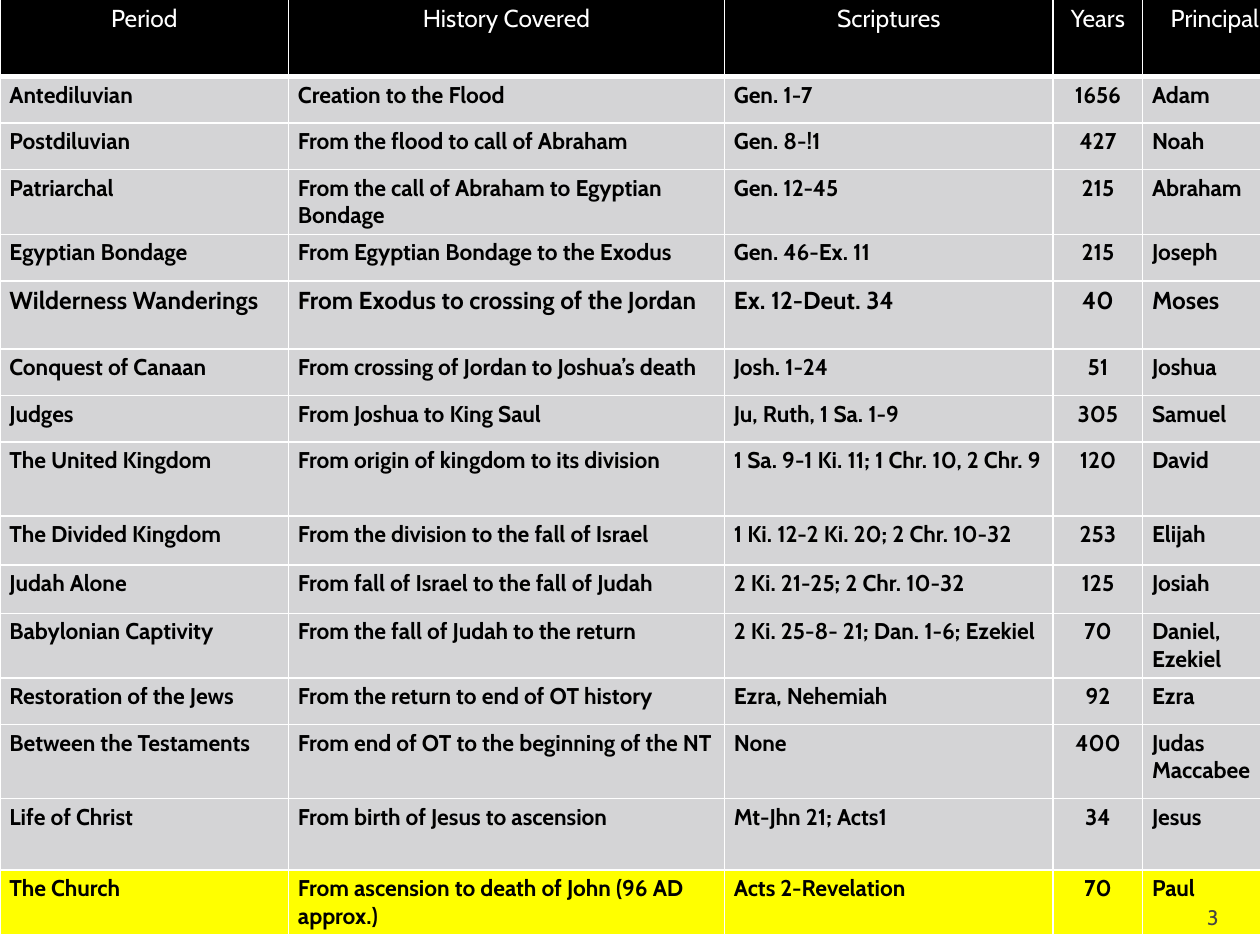
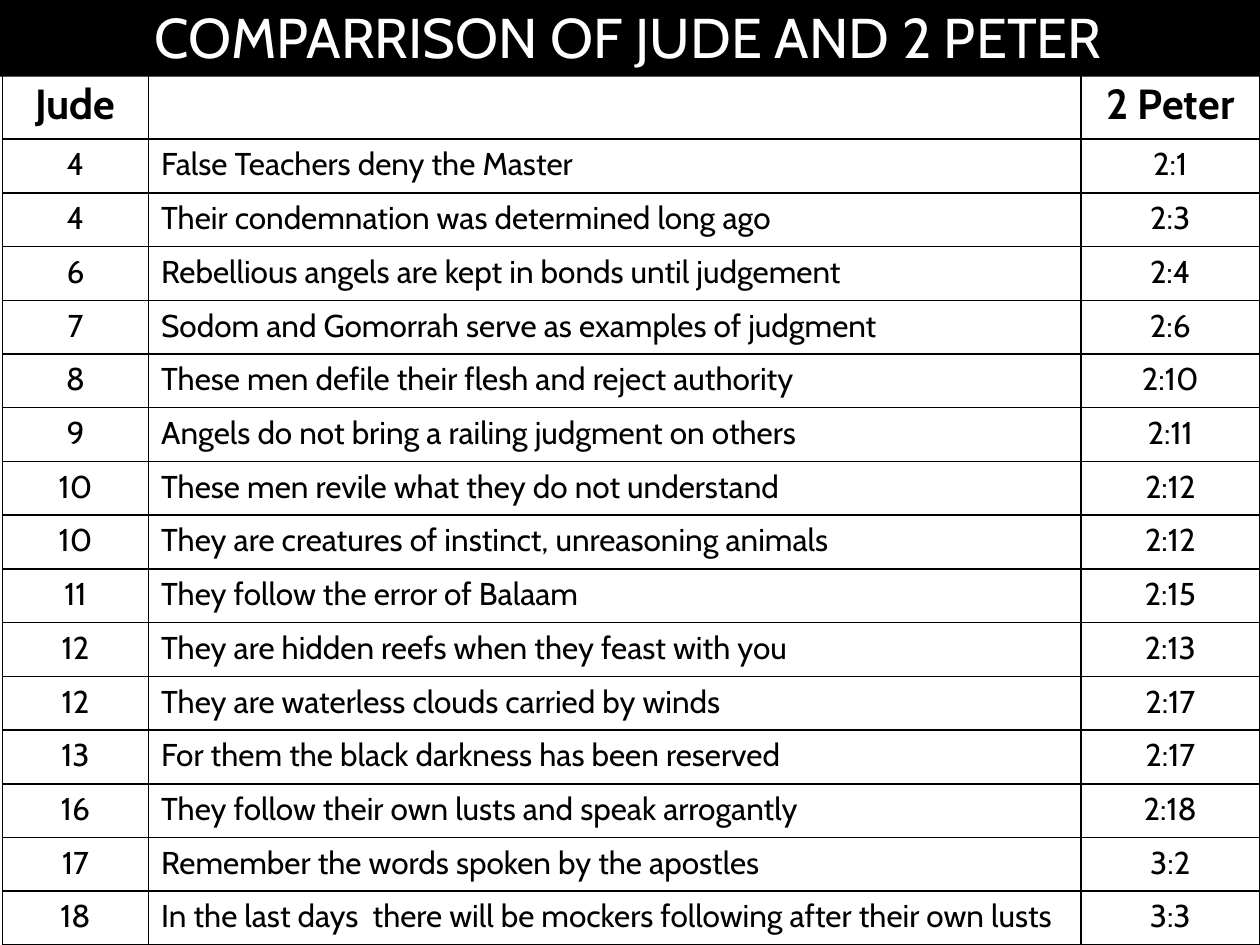
from lxml import etree
from pptx import Presentation
from pptx.dml.color import RGBColor
from pptx.enum.text import MSO_ANCHOR, MSO_AUTO_SIZE, PP_ALIGN
from pptx.oxml.ns import qn
from pptx.util import Pt

LEFT, CENTER, RIGHT = PP_ALIGN.LEFT, PP_ALIGN.CENTER, PP_ALIGN.RIGHT
TOP, MIDDLE, BOTTOM = MSO_ANCHOR.TOP, MSO_ANCHOR.MIDDLE, MSO_ANCHOR.BOTTOM
NO_FIT = MSO_AUTO_SIZE.NONE

FONT = "Cabin"
COLORS = {"black": "000000", "white": "FFFFFF", "gray": "D4D4D6",
          "yellow": "FFFF00", "number": "454545"}
BLANK_LAYOUT, TITLE_ONLY_LAYOUT = 6, 5

# Bible periods: column widths, then row height and cell texts
PERIOD_WIDTHS = [164.9, 249.1, 187.9, 51.1, 85.7]
PERIOD_ALIGNS = [LEFT, LEFT, LEFT, CENTER, LEFT]
PERIOD_HEADER = ["Period", "History Covered", "Scriptures", "Years", "Principal "]
PERIODS = [
    (26.6, "Antediluvian", "Creation to the Flood", "Gen. 1-7", "1656", "Adam"),
    (26.6, "Postdiluvian", "From the flood to call of Abraham", "Gen. 8-!1", "427", "Noah"),
    (37, "Patriarchal", "From the call of Abraham to Egyptian Bondage", "Gen. 12-45",
     "215", "Abraham"),
    (26.6, "Egyptian Bondage", "From Egyptian Bondage to the Exodus", "Gen. 46-Ex. 11",
     "215", "Joseph"),
    (39, "Wilderness Wanderings", "From Exodus to crossing of the Jordan",
     "Ex. 12-Deut. 34", "40", "Moses"),
    (26.6, "Conquest of Canaan", "From crossing of Jordan to Joshua’s death",
     "Josh. 1-24", "51", "Joshua"),
    (26.6, "Judges", "From Joshua to King Saul", "Ju, Ruth, 1 Sa. 1-9", "305", "Samuel"),
    (42.3, "The United Kingdom", "From origin of kingdom to its division",
     "1 Sa. 9-1 Ki. 11; 1 Chr. 10, 2 Chr. 9", "120", "David"),
    (28, "The Divided Kingdom", "From the division to the fall of Israel",
     "1 Ki. 12-2 Ki. 20; 2 Chr. 10-32", "253", "Elijah"),
    (27.6, "Judah Alone", "From fall of Israel to the fall of Judah",
     "2 Ki. 21-25; 2 Chr. 10-32", "125", "Josiah"),
    (35.5, "Babylonian Captivity", "From the fall of Judah to the return",
     "2 Ki. 25-8- 21; Dan. 1-6; Ezekiel", "70", "Daniel, Ezekiel"),
    (26.6, "Restoration of the Jews", "From the return to end of OT history",
     "Ezra, Nehemiah", "92", "Ezra"),
    (42.3, "Between the Testaments", "From end of OT to the beginning of the NT",
     "None", "400", "Judas Maccabee"),
    (41, "Life of Christ", "From birth of Jesus to ascension", "Mt-Jhn 21; Acts1",
     "34", "Jesus"),
    (37, "The Church", "From ascension to death of John (96 AD approx.)",
     "Acts 2-Revelation", "70", "Paul"),
]

# Parallel verses of the two letters
VERSE_WIDTHS = [83.5, 532.8, 102.2]
VERSE_ALIGNS = [CENTER, LEFT, CENTER]
VERSE_HEADER = ["Jude", "", "2 Peter"]
VERSES = [
    ("4", "False Teachers deny the Master", "2:1"),
    ("4", "Their condemnation was determined long ago", "2:3"),
    ("6", "Rebellious angels are kept in bonds until judgement", "2:4"),
    ("7", "Sodom and Gomorrah serve as examples of judgment", "2:6"),
    ("8", "These men defile their flesh and reject authority", "2:10"),
    ("9", "Angels do not bring a railing judgment on others", "2:11"),
    ("10", "These men revile what they do not understand", "2:12"),
    ("10", "They are creatures of instinct, unreasoning animals", "2:12"),
    ("11", "They follow the error of Balaam", "2:15"),
    ("12", "They are hidden reefs when they feast with you", "2:13"),
    ("12", "They are waterless clouds carried by winds", "2:17"),
    ("13", "For them the black darkness has been reserved", "2:17"),
    ("16", "They follow their own lusts and speak arrogantly", "2:18"),
    ("17", "Remember the words spoken by the apostles", "3:2"),
    ("18", "In the last days  there will be mockers following after their own lusts", "3:3"),
]


def rgb(color):
    return RGBColor.from_string(COLORS[color])


def set_format(target, formats):
    for attribute, value in formats.items():
        setattr(target, attribute, value)


def write(frame, text, size, color="black", bold=False, align=LEFT):
    paragraph = frame.paragraphs[0]
    paragraph.alignment = align
    if text:
        run = paragraph.add_run()
        run.text = text
        set_format(run.font, {"name": FONT, "size": Pt(size), "bold": bold})
        run.font.color.rgb = rgb(color)


def add_borders(cell, color, bottom=1):
    properties = cell._tc.get_or_add_tcPr()
    for side, width in (("L", 1), ("R", 1), ("T", 1), ("B", bottom)):
        line = etree.SubElement(properties, qn(f"a:ln{side}"), w=str(Pt(width)))
        solid = etree.SubElement(line, qn("a:solidFill"))
        etree.SubElement(solid, qn("a:srgbClr"), val=COLORS[color])


def add_grid(slide, left, top, widths, heights):
    frame = slide.shapes.add_table(len(heights), len(widths), Pt(left), Pt(top),
                                   Pt(sum(widths)), Pt(sum(heights)))
    grid = frame.table
    set_format(grid, {"first_row": False, "horz_banding": False})
    for column, width in zip(grid.columns, widths):
        column.width = Pt(width)
    for row, height in zip(grid.rows, heights):
        row.height = Pt(height)
    return grid


def fill_row(row, texts, aligns, border, fill=None, bottom=1, margins=None, **style):
    for cell, text, align in zip(row.cells, texts, aligns):
        add_borders(cell, border, bottom)
        if fill:
            cell.fill.solid()
            cell.fill.fore_color.rgb = rgb(fill)
        else:
            cell.fill.background()
        set_format(cell, margins or {})
        write(cell.text_frame, text, align=align, **style)


def add_page_number(slide, number):
    box = slide.shapes.add_textbox(Pt(645.8), Pt(509.8), Pt(57.6), Pt(21.6))
    set_format(box.text_frame, {"word_wrap": True, "vertical_anchor": BOTTOM,
                                "margin_bottom": 0})
    write(box.text_frame, number, 12, "number", align=RIGHT)


def add_title_band(slide, text):
    band = slide.shapes.title
    set_format(band, {"left": Pt(-1.4), "top": Pt(-2.2),
                      "width": Pt(721.4), "height": Pt(46)})
    band.fill.solid()
    band.fill.fore_color.rgb = rgb("black")
    set_format(band.text_frame, {"auto_size": NO_FIT, "vertical_anchor": MIDDLE,
                                 "word_wrap": True})
    write(band.text_frame, text, 32, "white", align=CENTER)


def build_periods(slide):
    heights = [44.5] + [period[0] for period in PERIODS]
    grid = add_grid(slide, 0, -0.7, PERIOD_WIDTHS, heights)
    margins = {"margin_left": Pt(5.4), "margin_right": Pt(5.4), "margin_top": Pt(2.7),
               "margin_bottom": Pt(2.7), "vertical_anchor": TOP}
    header, *rows = grid.rows
    fill_row(header, PERIOD_HEADER, [CENTER] * 5, "white", "black", bottom=3,
             margins=margins, size=14, color="white")
    for row, (_, name, *details) in zip(rows, PERIODS):
        fill_row(row, [name, *details], PERIOD_ALIGNS, "white",
                 "yellow" if name == "The Church" else "gray", margins=margins,
                 size=14 if name == "Wilderness Wanderings" else 13, bold=True)
    add_page_number(slide, "3")


def build_comparison(slide):
    add_title_band(slide, "COMPARRISON OF JUDE AND 2 PETER")
    heights = [37.7] + [30.7] * len(VERSES)
    grid = add_grid(slide, 1.4, 41.8, VERSE_WIDTHS, heights)
    header, *rows = grid.rows
    fill_row(header, VERSE_HEADER, VERSE_ALIGNS, "black", size=24, bold=True)
    for row, verse in zip(rows, VERSES):
        fill_row(row, verse, VERSE_ALIGNS, "black", size=18)


def main():
    deck = Presentation()
    set_format(deck, {"slide_width": Pt(720), "slide_height": Pt(540)})
    for layout, build in ((BLANK_LAYOUT, build_periods),
                          (TITLE_ONLY_LAYOUT, build_comparison)):
        build(deck.slides.add_slide(deck.slide_layouts[layout]))
    deck.save("out.pptx")


if __name__ == "__main__":
    main()
